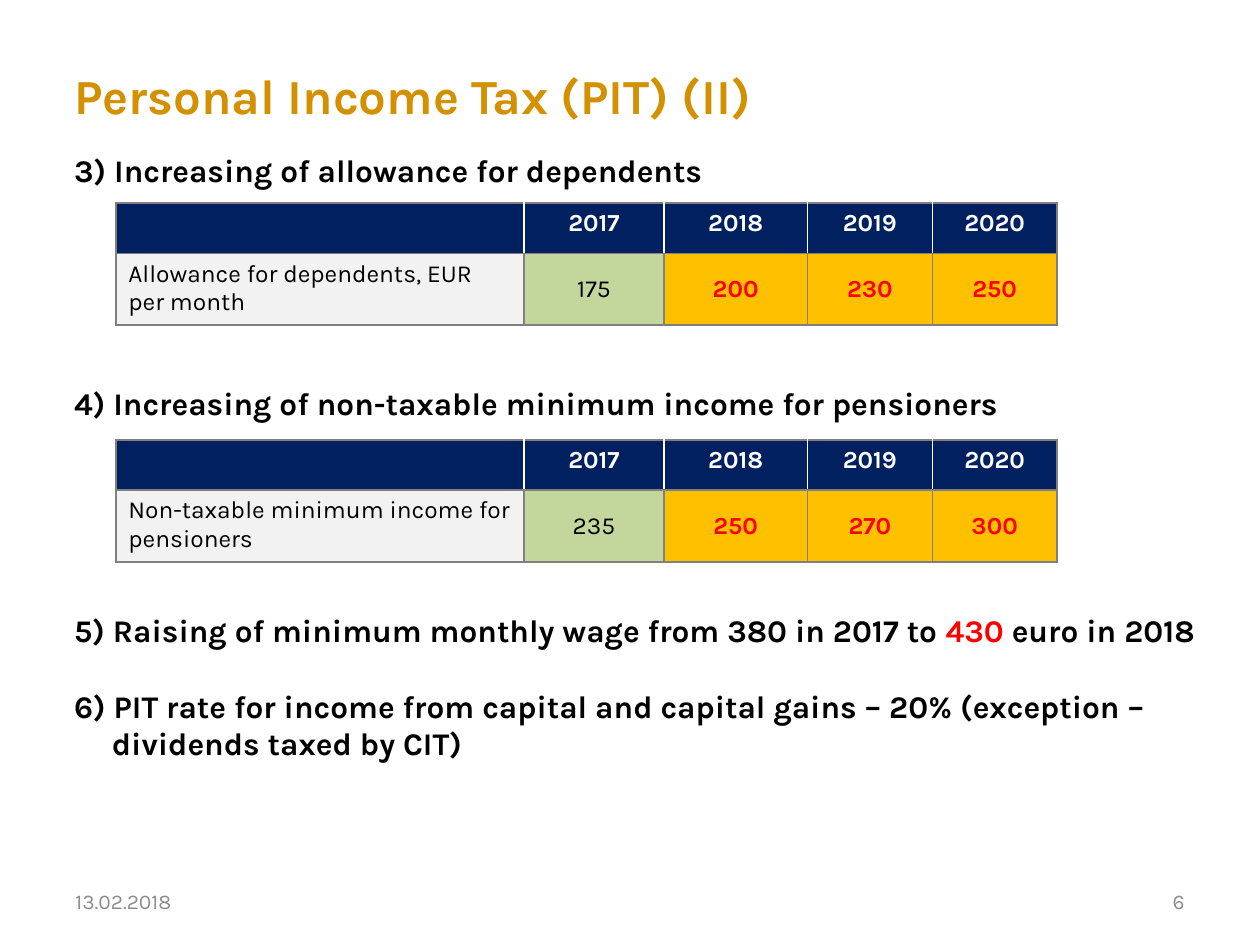
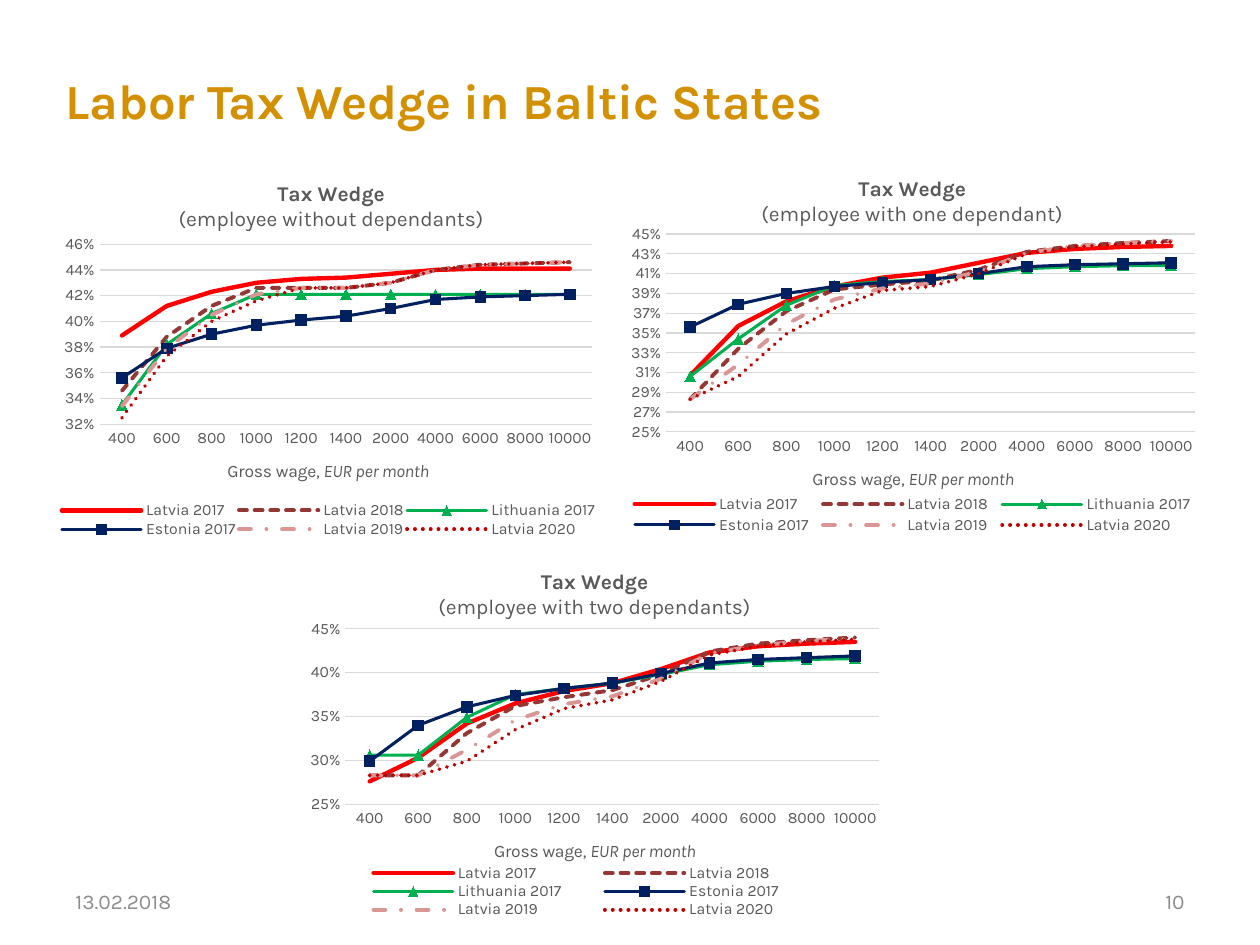
from dataclasses import dataclass
from typing import NamedTuple, Optional

import lxml.etree
import pptx
import pptx.chart.data
import pptx.dml.color
import pptx.enum.chart
import pptx.enum.dml
import pptx.enum.text
import pptx.oxml.ns
import pptx.util

Pt = pptx.util.Pt
qn = pptx.oxml.ns.qn
ALIGN = pptx.enum.text.PP_ALIGN
ANCHOR = pptx.enum.text.MSO_ANCHOR
DASH = pptx.enum.dml.MSO_LINE
MARKER = pptx.enum.chart.XL_MARKER_STYLE

FONT = "Karla"
COLORS = {
    "white": "FFFFFF", "black": "000000", "title": "D39001", "footer": "8C8C8C",
    "navy": "002060", "red": "FF0000", "label": "F2F2F2", "current": "C3D69B",
    "planned": "FFC000", "border": "808080", "chart_text": "595959", "grid": "D9D9D9",
    "brown": "953735", "green": "00B050", "pink": "D99694", "dark_red": "C00000",
}
DATE = "13.02.2018"
YEARS = ("2017", "2018", "2019", "2020")
COLUMN_WIDTHS = (233.3, 79.9, 82.1, 71.3, 71.3)
ROW_HEIGHTS = (28, 41)
WAGES = ("400", "600", "800", "1000", "1200", "1400",
         "2000", "4000", "6000", "8000", "10000")


class Box(NamedTuple):
    left: float
    top: float
    width: float
    height: float

    def lengths(self) -> list:
        return [Pt(v) for v in self]


class Run(NamedTuple):
    text: str
    color: str = "black"
    bold: bool = False
    italic: bool = False


class Heading(NamedTuple):
    runs: tuple
    space_before: float = 0
    indent: float = 0


class LineStyle(NamedTuple):
    name: str
    color: str
    width: float
    dash: Optional[object] = None
    marker: Optional[object] = None


@dataclass
class AllowanceTable:
    top: float
    label: str
    values: tuple


@dataclass
class WedgeChart:
    box: Box
    subtitle: str
    low: float
    high: float
    step: float
    plot: Box
    legend: Box
    percents: tuple


LINES = (
    LineStyle("Latvia 2017", "red", 2.5),
    LineStyle("Latvia 2018", "brown", 2.25, DASH.SQUARE_DOT),
    LineStyle("Lithuania 2017", "green", 1.75, marker=MARKER.TRIANGLE),
    LineStyle("Estonia 2017", "navy", 1.75, marker=MARKER.SQUARE),
    LineStyle("Latvia 2019", "pink", 2.25, DASH.DASH_DOT),
    LineStyle("Latvia 2020", "dark_red", 2.25, DASH.ROUND_DOT),
)

HEADINGS = (
    Heading((Run("3) Increasing of allowance for dependents", bold=True),)),
    Heading((Run("4) Increasing of non-taxable minimum income for pensioners",
                 bold=True),), 111.5),
    Heading((Run("5) Raising of minimum monthly wage from 380 in 2017 to ", bold=True),
             Run("430", "red", True), Run(" euro in 2018", bold=True)), 108, 21.6),
    Heading((Run("6) PIT rate for income from capital and capital gains – 20% "
                 "(exception – dividends taxed by CIT)", bold=True),), 21.7, 21.6),
)

TABLES = (
    AllowanceTable(115.9, "Allowance for dependents, EUR per month",
                   ("175", "200", "230", "250")),
    AllowanceTable(251.3, "Non-taxable minimum income for pensioners",
                   ("235", "250", "270", "300")),
)

ESTONIA = (35.6, 37.9, 39, 39.7, 40.1, 40.4, 41, 41.7, 41.9, 42, 42.1)
CHARTS = (
    WedgeChart(
        Box(348.5, 89.3, 345.6, 222.5), "(employee with one dependant)", 0.25, 0.45, 0.02,
        Box(0.093, 0.2, 0.875, 0.508), Box(0.026, 0.864, 0.949, 0.113), (
            (30.7, 35.7, 38.2, 39.7, 40.6, 41.1, 42.1, 43.1, 43.5, 43.7, 43.8),
            (28.3, 33.4, 37.2, 39.4, 39.9, 40.3, 41.4, 43.2, 43.8, 44.1, 44.3),
            (30.6, 34.4, 37.8, 39.8, 40.2, 40.4, 40.9, 41.5, 41.7, 41.8, 41.8),
            ESTONIA,
            (28.3, 31.8, 35.9, 38.4, 39.5, 40, 41.2, 43.1, 43.8, 44.1, 44.3),
            (28.3, 30.6, 34.9, 37.5, 39.3, 39.7, 41, 43, 43.7, 44, 44.2))),
    WedgeChart(
        Box(167, 313.9, 345.6, 215.3), "(employee with two dependants)", 0.25, 0.45, 0.05,
        Box(0.088, 0.211, 0.883, 0.466), Box(0.071, 0.835, 0.797, 0.145), (
            (27.6, 30.3, 34.2, 36.5, 37.9, 38.8, 40.4, 42.3, 43, 43.3, 43.5),
            (28.3, 28.3, 33.1, 36.2, 37.2, 38, 39.8, 42.4, 43.3, 43.7, 44),
            (30.6, 30.6, 34.9, 37.5, 38.2, 38.8, 39.8, 40.9, 41.3, 41.5, 41.6),
            (29.9, 34, 36.1, 37.4, 38.2, 38.8, 39.9, 41.1, 41.5, 41.7, 41.9),
            (28.3, 28.3, 31.2, 34.6, 36.4, 37.3, 39.3, 42.2, 43.1, 43.6, 43.9),
            (28.3, 28.3, 29.9, 33.5, 35.9, 36.9, 39, 42, 43, 43.5, 43.8))),
    WedgeChart(
        Box(30.2, 92.2, 318.2, 220.3), "(employee without dependants)", 0.32, 0.46, 0.02,
        Box(0.084, 0.215, 0.885, 0.467), Box(0.01, 0.88, 0.97, 0.1), (
            (38.9, 41.2, 42.3, 43, 43.3, 43.4, 43.7, 44, 44.1, 44.1, 44.1),
            (34.6, 38.8, 41.2, 42.6, 42.6, 42.6, 43, 44, 44.4, 44.5, 44.6),
            (33.5, 38.2, 40.6, 42.1, 42.1, 42.1, 42.1, 42.1, 42.1, 42.1, 42.1),
            ESTONIA,
            (33.4, 37.9, 40.5, 42.1, 42.6, 42.6, 43, 44, 44.4, 44.5, 44.6),
            (32.5, 37.3, 40, 41.6, 42.6, 42.6, 43, 44, 44.4, 44.5, 44.6))),
)


def rgb(color: str) -> pptx.dml.color.RGBColor:
    return pptx.dml.color.RGBColor.from_string(COLORS[color])


def style_font(font, size: float, color: str, bold=False, italic=False) -> None:
    font.name = FONT
    font.size = Pt(size)
    font.bold = bold
    font.italic = italic
    font.color.rgb = rgb(color)


def add_runs(p, size: float, *runs: Run) -> None:
    for run in runs:
        r = p.add_run()
        r.text = run.text
        style_font(r.font, size, run.color, run.bold, run.italic)


def add_text_box(slide, box: Box, anchor=ANCHOR.MIDDLE):
    sp = slide.shapes.add_textbox(*box.lengths())
    tf = sp.text_frame
    tf.word_wrap = True
    tf.vertical_anchor = anchor
    return sp


def add_frame(slide, title: str, title_box: Box, number: int) -> None:
    """Title, date and slide number."""
    sp = add_text_box(slide, title_box)
    sp.fill.solid()
    sp.fill.fore_color.rgb = rgb("white")
    add_runs(sp.text_frame.paragraphs[0], 28, Run(title, "title", True))
    for left, text, align in ((36, DATE, ALIGN.LEFT), (516, str(number), ALIGN.RIGHT)):
        sp = add_text_box(slide, Box(left, 500.4, 168, 28.8))
        p = sp.text_frame.paragraphs[0]
        p.alignment = align
        add_runs(p, 12, Run(text, "footer"))


def add_headings(slide) -> None:
    tf = add_text_box(slide, Box(35.3, 82.8, 659.5, 360), ANCHOR.TOP).text_frame
    for i, heading in enumerate(HEADINGS):
        p = tf.add_paragraph() if i else tf.paragraphs[0]
        if i:
            p.space_before = Pt(heading.space_before)
        if heading.indent:
            pPr = p._p.get_or_add_pPr()
            pPr.set("marL", str(Pt(heading.indent)))
            pPr.set("indent", str(-Pt(heading.indent)))
        add_runs(p, 18, *heading.runs)


def set_borders(cell, sides: dict) -> None:
    tcPr = cell._tc.get_or_add_tcPr()
    for i, side in enumerate(("L", "R", "T", "B")):
        ln = lxml.etree.Element(qn(f"a:ln{side}"), w=str(Pt(1)))
        fill = lxml.etree.SubElement(ln, qn("a:solidFill"))
        color = COLORS[sides.get(side, "border")]
        lxml.etree.SubElement(fill, qn("a:srgbClr"), val=color)
        tcPr.insert(i, ln)


def fill_cell(cell, run: Run, fill: str, align, anchor, sides: dict) -> None:
    cell.fill.solid()
    cell.fill.fore_color.rgb = rgb(fill)
    cell.vertical_anchor = anchor
    p = cell.text_frame.paragraphs[0]
    p.alignment = align
    if run.text:
        add_runs(p, 14, run)
    set_borders(cell, sides)


def add_allowance_table(slide, spec_table: AllowanceTable) -> None:
    box = Box(66.2, spec_table.top, sum(COLUMN_WIDTHS), sum(ROW_HEIGHTS))
    table = slide.shapes.add_table(2, len(COLUMN_WIDTHS), *box.lengths()).table
    for column, width in zip(table.columns, COLUMN_WIDTHS):
        column.width = Pt(width)
    for row, height in zip(table.rows, ROW_HEIGHTS):
        row.height = Pt(height)
    last = len(YEARS)
    for i, year in enumerate(("",) + YEARS):
        sides = {}
        if i > 0:
            sides["L"] = "white"
        if i < last:
            sides["R"] = "white"
        fill_cell(table.cell(0, i), Run(year, "white", True), "navy",
                  ALIGN.CENTER, ANCHOR.TOP, sides)
    fill_cell(table.cell(1, 0), Run(spec_table.label), "label", ALIGN.LEFT, ANCHOR.TOP, {})
    for i, value in enumerate(spec_table.values, 1):
        run, fill = (Run(value), "current") if i == 1 else (Run(value, "red", True), "planned")
        fill_cell(table.cell(1, i), run, fill, ALIGN.CENTER, ANCHOR.MIDDLE, {})


def manual_layout(box: Box, inner: bool = False):
    """Layout element that places a chart part by fractions of the chart."""
    layout = lxml.etree.Element(qn("c:layout"))
    manual = lxml.etree.SubElement(layout, qn("c:manualLayout"))
    settings = [("layoutTarget", "inner")] if inner else []
    settings += [("xMode", "edge"), ("yMode", "edge")]
    settings += zip("xywh", box)
    for tag, value in settings:
        lxml.etree.SubElement(manual, qn(f"c:{tag}"), val=str(value))
    return layout


def drop_layout(element) -> None:
    for layout in element.findall(qn("c:layout")):
        element.remove(layout)


def style_series(series, style: LineStyle) -> None:
    series.smooth = False
    line = series.format.line
    line.color.rgb = rgb(style.color)
    line.width = Pt(style.width)
    if style.dash:
        line.dash_style = style.dash
    series._element.find(qn("c:spPr")).find(qn("a:ln")).set("cap", "rnd")
    series.marker.style = style.marker or MARKER.NONE
    if style.marker:
        series.marker.size = 6
        series.marker.format.fill.solid()
        series.marker.format.fill.fore_color.rgb = rgb(style.color)
        series.marker.format.line.color.rgb = rgb(style.color)


def style_axes(chart, wedge: WedgeChart) -> None:
    cat, val = chart.category_axis, chart.value_axis
    for axis in (cat, val):
        axis.major_tick_mark = axis.minor_tick_mark = pptx.enum.chart.XL_TICK_MARK.NONE
        style_font(axis.tick_labels.font, 9, "chart_text")
    cat.format.line.color.rgb = rgb("grid")
    cat.format.line.width = Pt(0.75)
    add_runs(cat.axis_title.text_frame.paragraphs[0], 10,
             Run("Gross wage, ", "chart_text"),
             Run("EUR per month", "chart_text", italic=True))
    val.minimum_scale, val.maximum_scale = wedge.low, wedge.high
    val.major_unit = wedge.step
    val.format.line.fill.background()
    val.major_gridlines.format.line.color.rgb = rgb("grid")
    val.major_gridlines.format.line.width = Pt(0.75)
    val.tick_labels.number_format = "0%"
    val.tick_labels.number_format_is_linked = False


def add_wedge_chart(slide, wedge: WedgeChart) -> None:
    data = pptx.chart.data.CategoryChartData(number_format="0.0%")
    data.categories = WAGES
    for style, percents in zip(LINES, wedge.percents):
        data.add_series(style.name, [round(v / 100, 3) for v in percents])
    kind = pptx.enum.chart.XL_CHART_TYPE.LINE_MARKERS
    chart = slide.shapes.add_chart(kind, *wedge.box.lengths(), data).chart
    style_font(chart.font, 10, "black")
    chart.plots[0].vary_by_categories = False
    for series, style in zip(chart.plots[0].series, LINES):
        style_series(series, style)
    style_axes(chart, wedge)

    tf = chart.chart_title.text_frame
    add_runs(tf.paragraphs[0], 12, Run("Tax Wedge", "chart_text", True))
    add_runs(tf.add_paragraph(), 12, Run(wedge.subtitle, "chart_text"))

    chart.has_legend = True
    legend = chart.legend
    legend.position = pptx.enum.chart.XL_LEGEND_POSITION.BOTTOM
    legend.include_in_layout = False
    style_font(legend.font, 9, "chart_text")
    drop_layout(legend._element)
    legend._element.find(qn("c:legendPos")).addnext(manual_layout(wedge.legend))
    plot_area = chart._chartSpace.chart.plotArea
    drop_layout(plot_area)
    plot_area.insert(0, manual_layout(wedge.plot, inner=True))


def main() -> None:
    prs = pptx.Presentation()
    prs.slide_width, prs.slide_height = Pt(720), Pt(540)
    blank = prs.slide_layouts[6]

    slide = prs.slides.add_slide(blank)
    add_frame(slide, "Personal Income Tax (PIT) (II)", Box(35.3, 33.8, 447.8, 41), 6)
    add_headings(slide)
    for table in TABLES:
        add_allowance_table(slide, table)

    slide = prs.slides.add_slide(blank)
    add_frame(slide, "Labor Tax Wedge in Baltic States", Box(30.2, 37.4, 460.1, 39.6), 10)
    for wedge in CHARTS:
        add_wedge_chart(slide, wedge)

    prs.save("out.pptx")


if __name__ == "__main__":
    main()
